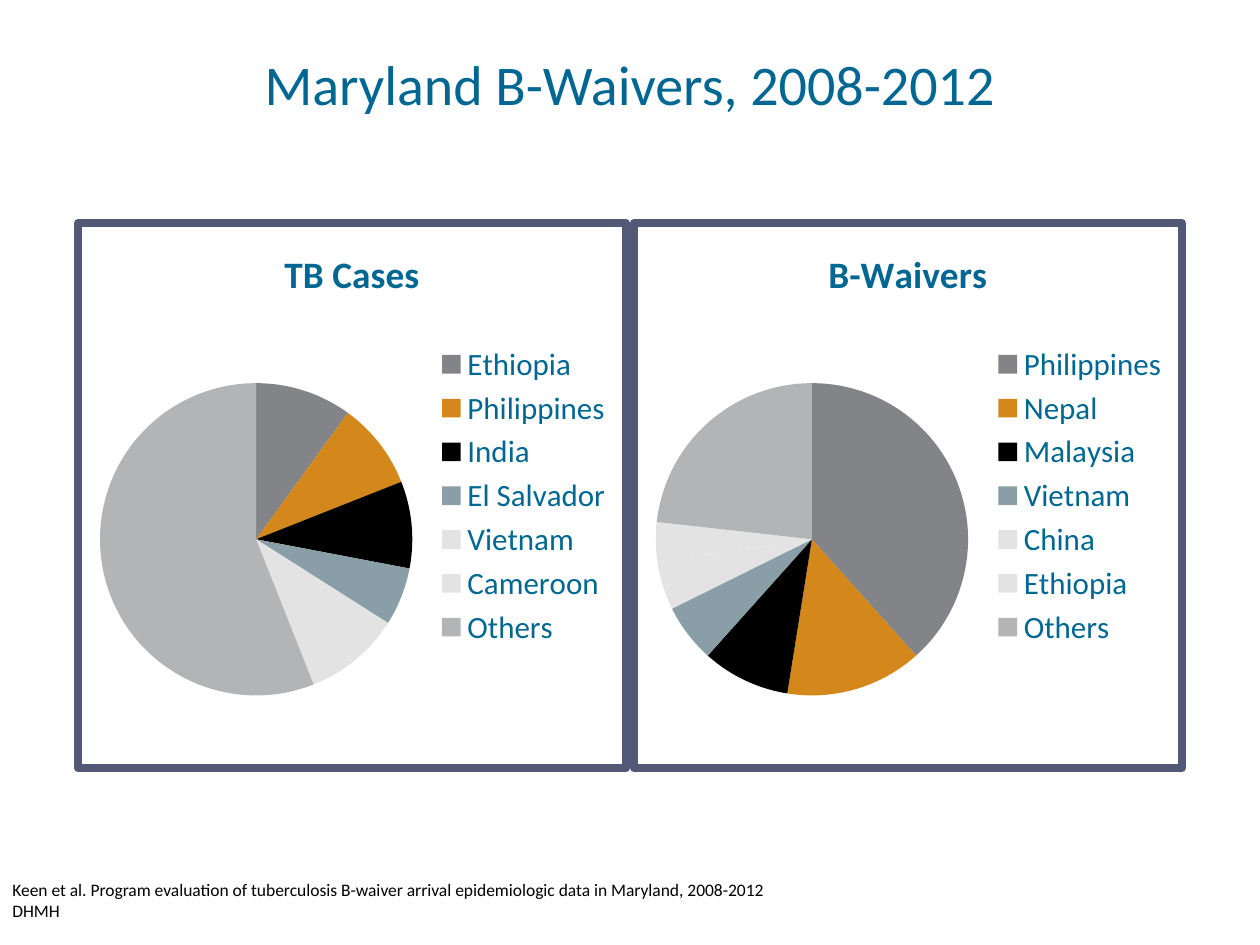
from dataclasses import dataclass

from pptx import Presentation
from pptx.chart.data import CategoryChartData
from pptx.dml.color import RGBColor
from pptx.enum.chart import XL_CHART_TYPE as CT, XL_LEGEND_POSITION as LP
from pptx.enum.text import MSO_AUTO_SIZE as FIT, PP_ALIGN as AL
from pptx.oxml import parse_xml
from pptx.oxml.ns import nsdecls, qn
from pptx.util import Pt

TEAL = RGBColor(0x00, 0x67, 0x92)
BLACK = RGBColor(0, 0, 0)
FRAME = RGBColor(0x52, 0x59, 0x77)
GREY = RGBColor(0x83, 0x84, 0x87)
ORANGE = RGBColor(0xD4, 0x88, 0x1C)
STEEL = RGBColor(0x89, 0x9E, 0xA7)
PALE = RGBColor(0xE3, 0xE3, 0xE3)
SILVER = RGBColor(0xB3, 0xB4, 0xB6)
SLICES = (GREY, ORANGE, BLACK, STEEL, PALE, PALE, SILVER)

PIE_AREA = {"x": 0.04, "y": 0.29, "w": 0.57, "h": 0.58}
LEFT, TOP, WIDTH, HEIGHT = 42.4, 125.3, 317.6, 316


@dataclass
class Pie:
    title: str
    shares: dict[str, int]


PIES = (
    Pie("TB Cases", {"Ethiopia": 10, "Philippines": 9, "India": 9, "El Salvador": 6,
                     "Vietnam": 6, "Cameroon": 4, "Others": 56}),
    Pie("B-Waivers", {"Philippines": 38, "Nepal": 14, "Malaysia": 9, "Vietnam": 6,
                      "China": 5, "Ethiopia": 4, "Others": 23}),
)


def set_font(font, size: float, color: RGBColor, bold: bool = False) -> None:
    for name, value in {"name": "Calibri", "size": Pt(size), "bold": bold}.items():
        setattr(font, name, value)
    font.color.rgb = color


def add_text(s, box: tuple, lines: tuple, size: float, color: RGBColor,
             wrap: bool, fit: FIT, **paragraph_format):
    tf = s.shapes.add_textbox(*map(Pt, box)).text_frame
    tf.word_wrap = wrap
    tf.auto_size = fit
    for i, line in enumerate(lines):
        p = tf.add_paragraph() if i else tf.paragraphs[0]
        for name, value in paragraph_format.items():
            setattr(p, name, value)
        r = p.add_run()
        r.text = line
        set_font(r.font, size, color)


def frame_chart(chart) -> None:
    space = chart.element
    space.find(qn("c:chart")).addnext(parse_xml(
        f'<c:spPr {nsdecls("c", "a")}><a:noFill/><a:ln w="{Pt(4.5)}"><a:solidFill>'
        f'<a:srgbClr val="{FRAME}"/></a:solidFill><a:round/></a:ln></c:spPr>'))


def place_pie(chart) -> None:
    area = chart.element.find(qn("c:chart")).find(qn("c:plotArea"))
    for old in area.findall(qn("c:layout")):
        area.remove(old)
    modes = "".join(f'<c:{k}Mode val="edge"/>' for k in "xy")
    sizes = "".join(f'<c:{k} val="{v}"/>' for k, v in PIE_AREA.items())
    area.insert(0, parse_xml(
        f'<c:layout {nsdecls("c")}><c:manualLayout><c:layoutTarget val="inner"/>'
        f'{modes}{sizes}</c:manualLayout></c:layout>'))


def add_pie(s, pie: Pie, left: float) -> None:
    data = CategoryChartData()
    data.categories = list(pie.shares)
    data.add_series(pie.title, list(pie.shares.values()))
    box = map(Pt, (left, TOP, WIDTH, HEIGHT))
    chart = s.shapes.add_chart(CT.PIE, *box, data).chart
    set_font(chart.font, 18, TEAL)

    chart.has_title = True
    chart.chart_title.include_in_layout = False
    r = chart.chart_title.text_frame.paragraphs[0].add_run()
    r.text = pie.title
    set_font(r.font, 21.6, TEAL, bold=True)

    chart.has_legend = True
    chart.legend.position = LP.RIGHT
    chart.legend.include_in_layout = False
    set_font(chart.legend.font, 18, TEAL)

    plot = chart.plots[0]
    plot.vary_by_categories = True
    for i, color in enumerate(SLICES):
        fill = plot.series[0].points[i].format.fill
        fill.solid()
        fill.fore_color.rgb = color
    frame_chart(chart)
    place_pie(chart)


def main() -> None:
    prs = Presentation()
    prs.slide_width, prs.slide_height = Pt(720), Pt(540)
    s = prs.slides.add_slide(prs.slide_layouts[6])
    add_text(s, (49.7, 28.8, 620.6, 104.4), ("Maryland B-Waivers, 2008-2012",), 32, TEAL,
             True, FIT.NONE, alignment=AL.CENTER, line_spacing=0.9)
    for i, pie in enumerate(PIES):
        add_pie(s, pie, LEFT + i * WIDTH)
    add_text(s, (0, 499, 450.7, 31.7),
             ("Keen et al. Program evaluation of tuberculosis B-waiver arrival "
              "epidemiologic data in Maryland, 2008-2012", "DHMH"),
             10, BLACK, False, FIT.SHAPE_TO_FIT_TEXT)
    prs.save("out.pptx")


if __name__ == "__main__":
    main()
